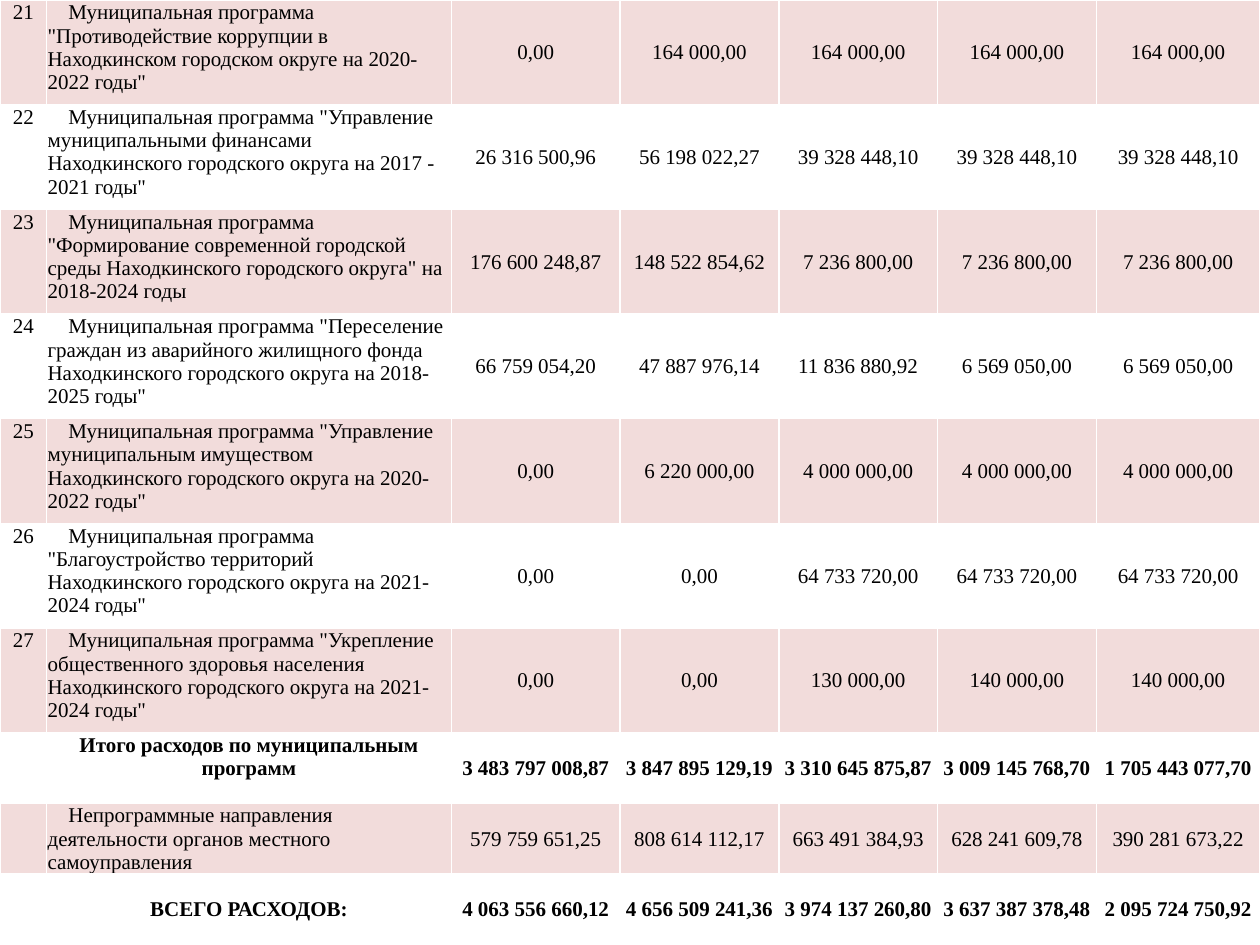
from lxml.etree import SubElement
from pptx import Presentation
from pptx.dml.color import RGBColor
from pptx.enum.text import MSO_ANCHOR, PP_ALIGN
from pptx.oxml.ns import qn
from pptx.util import Cm, Pt

COLORS = {"text": "000000", "band": "F2DCDB", "plain": "FFFFFF", "border": "FFFFFF"}
FONT = "Times New Roman"
COLUMN_WIDTHS = [0.94, 8.16, 3.4, 3.2, 3.2, 3.2, 3.3]
PROGRAM_HEIGHT, SUMMARY_HEIGHT = 2.11, 1.42

# Number, name, then the amounts by year
ROWS = [
    ("21", 'Муниципальная программа "Противодействие коррупции в Находкинском городском округе на 2020-2022 годы"',
     "0,00", "164 000,00", "164 000,00", "164 000,00", "164 000,00"),
    ("22", 'Муниципальная программа "Управление муниципальными финансами Находкинского городского округа на 2017 - 2021 годы"',
     "26 316 500,96", "56 198 022,27", "39 328 448,10", "39 328 448,10", "39 328 448,10"),
    ("23", 'Муниципальная программа "Формирование современной городской среды Находкинского городского округа" на 2018-2024 годы',
     "176 600 248,87", "148 522 854,62", "7 236 800,00", "7 236 800,00", "7 236 800,00"),
    ("24", 'Муниципальная программа "Переселение граждан из аварийного жилищного фонда Находкинского городского округа на 2018-2025 годы"',
     "66 759 054,20", "47 887 976,14", "11 836 880,92", "6 569 050,00", "6 569 050,00"),
    ("25", 'Муниципальная программа "Управление муниципальным имуществом Находкинского городского округа на 2020-2022 годы"',
     "0,00", "6 220 000,00", "4 000 000,00", "4 000 000,00", "4 000 000,00"),
    ("26", 'Муниципальная программа "Благоустройство территорий Находкинского городского округа на 2021-2024 годы"',
     "0,00", "0,00", "64 733 720,00", "64 733 720,00", "64 733 720,00"),
    ("27", 'Муниципальная программа "Укрепление общественного здоровья населения Находкинского городского округа на 2021-2024 годы"',
     "0,00", "0,00", "130 000,00", "140 000,00", "140 000,00"),
    ("", "Итого расходов по муниципальным программ",
     "3 483 797 008,87", "3 847 895 129,19", "3 310 645 875,87", "3 009 145 768,70", "1 705 443 077,70"),
    ("", "Непрограммные направления деятельности органов местного самоуправления",
     "579 759 651,25", "808 614 112,17", "663 491 384,93", "628 241 609,78", "390 281 673,22"),
    ("", "ВСЕГО РАСХОДОВ:",
     "4 063 556 660,12", "4 656 509 241,36", "3 974 137 260,80", "3 637 387 378,48", "2 095 724 750,92"),
]
TOTAL_ROWS = (7, 9)
LAST_ROW = len(ROWS) - 1


def write_text(cell, text, bold=False, align=PP_ALIGN.CENTER, anchor=MSO_ANCHOR.MIDDLE, indent=0):
    cell.vertical_anchor = anchor
    cell.margin_left = cell.margin_right = cell.margin_top = Cm(0.02)
    cell.margin_bottom = 0
    paragraph = cell.text_frame.paragraphs[0]
    paragraph.alignment = align
    if indent:
        paragraph._p.get_or_add_pPr().set("indent", str(Cm(indent)))
    paragraph.font.size = Pt(12)
    if text:
        run = paragraph.add_run()
        run.text = text
        run.font.name = FONT
        run.font.size = Pt(12)
        run.font.bold = bold
        run.font.color.rgb = RGBColor.from_string(COLORS["text"])


def style_cell(cell, fill):
    properties = cell._tc.get_or_add_tcPr()
    for side in ("a:lnL", "a:lnR", "a:lnT", "a:lnB"):
        line = SubElement(properties, qn(side), w=str(Pt(1)))
        solid = SubElement(line, qn("a:solidFill"))
        SubElement(solid, qn("a:srgbClr"), val=COLORS["border"])
    cell.fill.solid()
    cell.fill.fore_color.rgb = RGBColor.from_string(COLORS[fill])


presentation = Presentation()
presentation.slide_width, presentation.slide_height = Cm(25.4), Cm(19.05)
slide = presentation.slides.add_slide(presentation.slide_layouts[6])

# Expenditure table
row_heights = [PROGRAM_HEIGHT if row[0] else SUMMARY_HEIGHT for row in ROWS]
table = slide.shapes.add_table(len(ROWS), len(COLUMN_WIDTHS), 0, 0,
                               Cm(sum(COLUMN_WIDTHS)), Cm(sum(row_heights))).table
table.first_row = table.horz_banding = False
for column, width in zip(table.columns, COLUMN_WIDTHS):
    column.width = Cm(width)

# Rows alternate in fill; totals are bold and centred
for row_index, (values, height) in enumerate(zip(ROWS, row_heights)):
    table.rows[row_index].height = Cm(height)
    is_total = row_index in TOTAL_ROWS
    for column_index, text in enumerate(values):
        cell = table.cell(row_index, column_index)
        style_cell(cell, "plain" if row_index % 2 else "band")
        is_name = column_index == 1 and not is_total
        is_top = column_index < 2 and row_index != LAST_ROW
        write_text(cell, text, bold=is_total,
                   align=PP_ALIGN.LEFT if is_name else PP_ALIGN.CENTER,
                   anchor=MSO_ANCHOR.TOP if is_top else MSO_ANCHOR.MIDDLE,
                   indent=0.42 if is_name else 0)

presentation.save("out.pptx")
